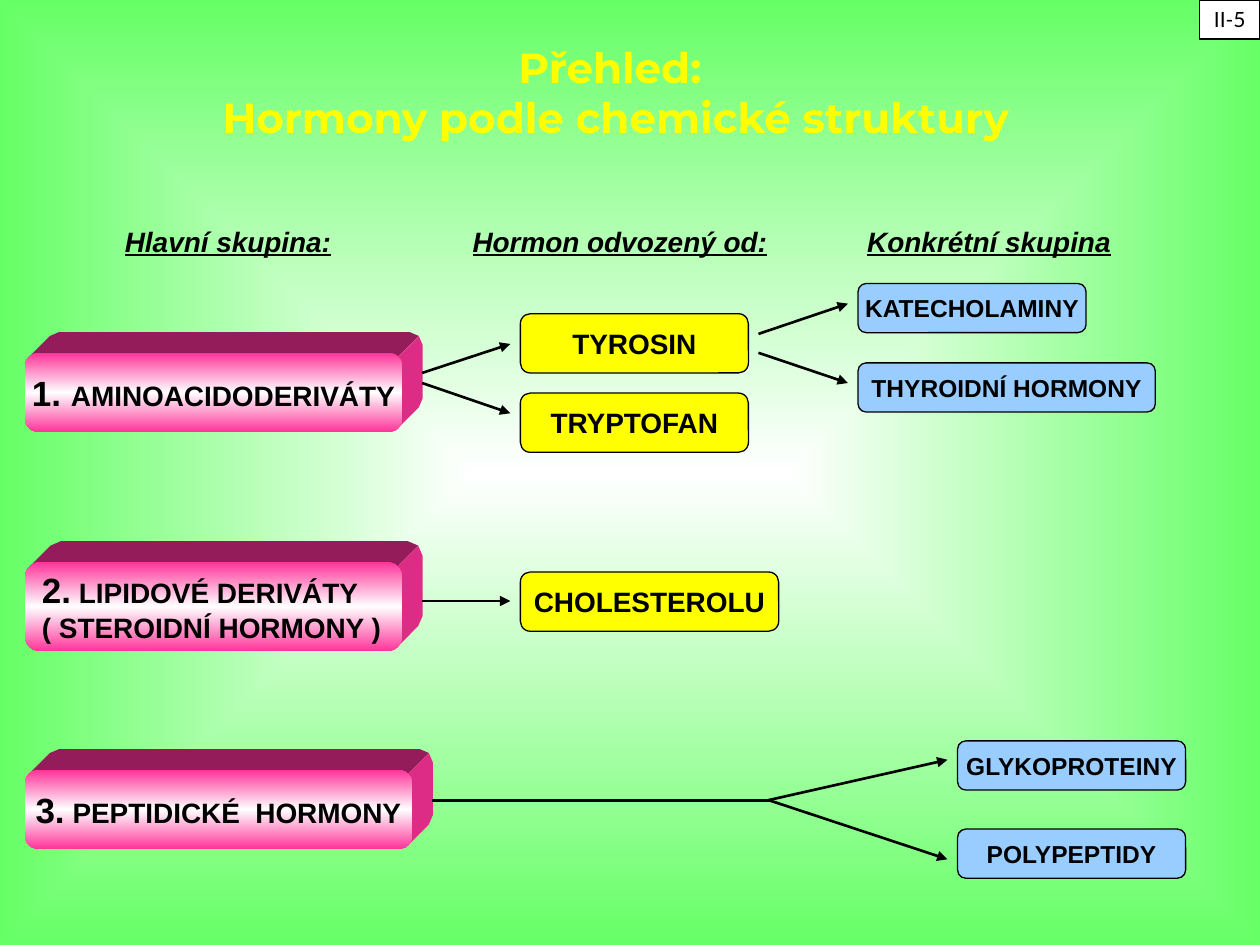
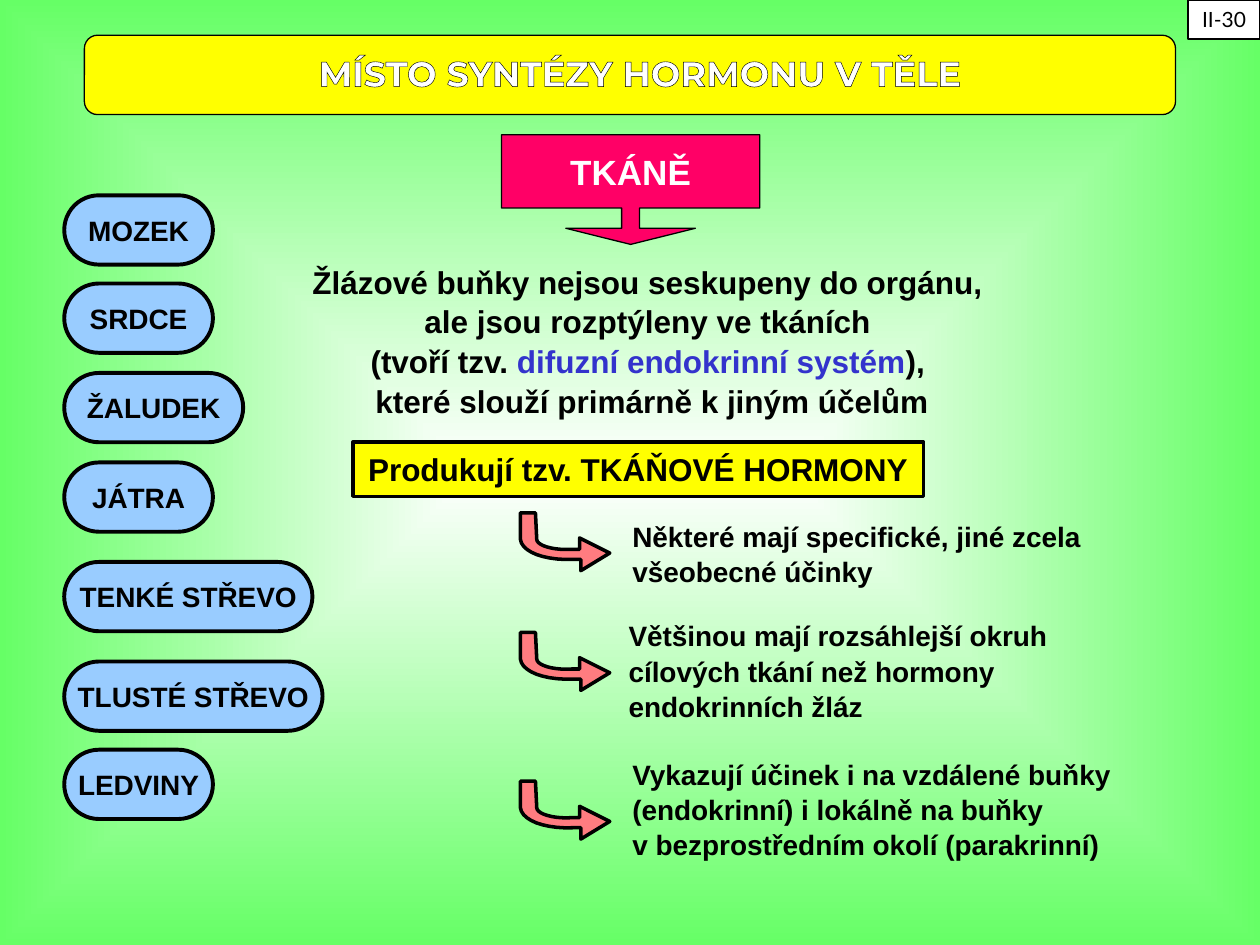
from pptx import Presentation
from pptx import util as u
from pptx.dml import color
from pptx.enum import shapes, text
from pptx.oxml import parse_xml
from pptx.oxml import ns

RGB = color.RGBColor
BLACK, WHITE = RGB(0, 0, 0), RGB(255, 255, 255)
YELLOW, GREEN = RGB(255, 255, 0), RGB(0x66, 0xFF, 0x66)
BLUE, INDIGO = RGB(0x99, 0xCC, 0xFF), RGB(0x33, 0x33, 0xCC)
PINK, ROSE, CORAL = RGB(0xFF, 0x33, 0x99), RGB(0xFF, 0, 0x66), RGB(0xFF, 0x7C, 0x80)
PLUM, MAGENTA = RGB(0x94, 0x1C, 0x5A), RGB(0xDD, 0x2C, 0x85)

KIND = shapes.MSO_SHAPE
MID, LEFT = text.PP_ALIGN.CENTER, text.PP_ALIGN.LEFT
COLS, ROWS = 100, 75
DEPTH = 1.65  # offset of the back of a block, in grid units
BODY, HEAD, PAGE = "Arial", "Montserrat", "Lato"


def grade(host, stops, way):
    """Replace the first solid fill in host by a gradient."""
    gs = "".join(f'<a:gs pos="{pos * 1000}"><a:srgbClr val="{rgb}"/></a:gs>'
                 for pos, rgb in stops)
    old = host.find(".//" + ns.qn("a:solidFill"))
    new = parse_xml(f'<a:gradFill rotWithShape="1" {ns.nsdecls("a")}>'
                    f'<a:gsLst>{gs}</a:gsLst>{way}</a:gradFill>')
    old.getparent().replace(old, new)


def curve(a, b, c, d, steps=10):
    """Points along a cubic curve, without its start."""
    for t in (n / steps for n in range(1, steps + 1)):
        s = 1 - t
        yield tuple(s**3 * p + 3 * s * s * t * q + 3 * s * t * t * r + t**3 * e
                    for p, q, r, e in zip(a, b, c, d))


class Deck:
    def __init__(self):
        self.prs = Presentation()
        self.prs.slide_width, self.prs.slide_height = u.Inches(10), u.Inches(7.5)
        self.slide = None
        master = self.prs.slide_master
        fill = master.background.fill
        fill.solid()
        fill.fore_color.rgb = WHITE
        grade(master.element, [(0, WHITE), (100, GREEN)],
              '<a:path path="shape"><a:fillToRect l="50000" t="50000" '
              'r="50000" b="50000"/></a:path>')

    def x(self, col):
        return round(self.prs.slide_width * col / COLS)

    def y(self, row):
        return round(self.prs.slide_height * row / ROWS)

    def area(self, at):
        return self.x(at[0]), self.y(at[1]), self.x(at[2]), self.y(at[3])

    def start(self):
        self.slide = self.prs.slides.add_slide(self.prs.slide_layouts[5])

    def letter(self, shape, lines, size, rgb=BLACK, face=BODY, bold=True,
               align=MID, slant=False, lead=None, anchor=text.MSO_ANCHOR.TOP):
        """Fill a shape with lines; a line is a string or (text, size, colour) runs."""
        frame = shape.text_frame
        frame.auto_size = text.MSO_AUTO_SIZE.NONE
        frame.word_wrap = False
        frame.vertical_anchor = anchor
        for n, line in enumerate(lines):
            par = frame.add_paragraph() if n else frame.paragraphs[0]
            par.alignment, par.line_spacing = align, lead
            par.space_before = u.Pt(0)
            font = par.font
            font.name, font.size, font.bold = face, u.Pt(size), bold
            font.color.rgb = rgb
            if slant:
                font.italic = font.underline = True
            for words, big, tint in [(line, None, None)] if isinstance(line, str) else line:
                run = par.add_run()
                run.text = words
                if big:
                    run.font.size = u.Pt(big)
                if tint:
                    run.font.color.rgb = tint

    def title(self, at, lines, size, rgb):
        head = self.slide.shapes.title
        head.left, head.top, head.width, head.height = self.area(at)
        self.letter(head, lines, size, rgb, HEAD)
        for par in head.text_frame.paragraphs:
            for run in par.runs:  # thin black outline of the letters
                run.font._element.insert(0, parse_xml(
                    f'<a:ln w="9525" {ns.nsdecls("a")}><a:solidFill>'
                    f'<a:srgbClr val="{BLACK}"/></a:solidFill></a:ln>'))
        head.element.getparent().append(head.element)  # in front of the band

    def note(self, at, lines, size, **style):
        self.letter(self.slide.shapes.add_textbox(*self.area(at)), lines, size, **style)

    def paint(self, shape, fill, edge):
        shape.shadow.inherit = False
        shape.fill.solid()
        shape.fill.fore_color.rgb = fill
        if edge:
            shape.line.color.rgb, shape.line.width = BLACK, u.Pt(edge)
        else:
            shape.line.fill.background()

    def box(self, at, lines, fill, size=16, kind=KIND.ROUNDED_RECTANGLE,
            edge=0.75, adj=(), **style):
        shape = self.slide.shapes.add_shape(kind, *self.area(at))
        for n, val in enumerate(adj):
            shape.adjustments[n] = val
        self.paint(shape, fill, edge)
        self.letter(shape, lines, size, anchor=text.MSO_ANCHOR.MIDDLE, **style)
        return shape

    def outline(self, pts, fill, edge=0):
        pts = [(self.x(col), self.y(row)) for col, row in pts]
        build = self.slide.shapes.build_freeform(*pts[0])
        build.add_line_segments(pts[1:])
        self.paint(build.convert_to_shape(), fill, edge)

    def block(self, at, lines, align=MID):
        """Rounded pink block with a visible top and right side."""
        left, top, wide, high = at
        right, foot, rad = left + wide, top + high, high / 6
        cut = 0.3 * rad
        nw, ne, se = (left + cut, top + cut), (right - cut, top + cut), (right - cut, foot - cut)
        roof = [nw, (left + rad, top), (right - rad, top), ne]
        side = [ne, (right, top + rad), (right, foot - rad), se]
        for face, tint in ((roof, PLUM), (side, MAGENTA)):
            far = [(col + DEPTH, row - DEPTH) for col, row in face]
            self.outline([face[0], *far, face[-1]], tint)
        front = self.box(at, lines, PINK, kind=KIND.FLOWCHART_ALTERNATE_PROCESS,
                         edge=0, align=align)
        grade(front.element, [(0, PINK), (50, WHITE), (100, PINK)],
              '<a:lin ang="5400000" scaled="1"/>')

    def line(self, start, end, width=1.5, arrow=True):
        link = self.slide.shapes.add_connector(
            shapes.MSO_CONNECTOR.STRAIGHT, self.x(start[0]), self.y(start[1]),
            self.x(end[0]), self.y(end[1]))
        link.line.color.rgb, link.line.width = BLACK, u.Pt(width)
        if arrow:
            link.line._get_or_add_ln().append(
                parse_xml(f'<a:tailEnd type="triangle" {ns.nsdecls("a")}/>'))
        link.element.spPr.append(parse_xml(f'<a:effectLst {ns.nsdecls("a")}/>'))

    def page(self, label, wide):
        self.box((COLS - wide, 0, wide, 3.1), [label], WHITE, 12,
                 KIND.RECTANGLE, face=PAGE, bold=False)


def groups(deck):
    deck.start()
    deck.title((3.5, 2.8, 89.8, 10.2),
               ["Přehled:", " Hormony podle chemické struktury"], 24, YELLOW)

    # Column heads
    for left, wide, head in ((8.9, 18.4, "Hlavní skupina:"),
                             (36.5, 25.4, "Hormon odvozený od:"),
                             (67.8, 21.4, "Konkrétní skupina")):
        deck.note((left, 17.3, wide, 3.7), [head], 16, slant=True)

    # Main groups
    deck.block((2, 28, 29.9, 6.3), [[("1. ", 20, None), ("AMINOACIDODERIVÁTY", None, None)]])
    deck.block((2, 44.6, 29.9, 7.1),
               [[("2.", 20, None), (" LIPIDOVÉ DERIVÁTY", None, None)],
                "( STEROIDNÍ HORMONY )"], LEFT)
    deck.block((2, 61.1, 30.7, 6.3), [[("3.", 20, None), (" PEPTIDICKÉ  HORMONY", None, None)]])

    # Sources and single groups
    for top, wide, name in ((24.9, 18.1, "TYROSIN"), (31.2, 18.1, "TRYPTOFAN"),
                            (45.4, 20.5, "CHOLESTEROLU")):
        deck.box((41.3, top, wide, 4.7), [name], YELLOW)
    for left, top, wide, name in ((68.1, 22.5, 18.1, "KATECHOLAMINY"),
                                  (68.1, 28.8, 23.6, "THYROIDNÍ HORMONY"),
                                  (76, 58.8, 18.1, "GLYKOPROTEINY"),
                                  (76, 65.8, 18.1, "POLYPEPTIDY")):
        deck.box((left, top, wide, 3.9), [name], BLUE, 14)

    # Links
    fork = (61, 63.5)
    deck.line(fork, (34.3, 63.5), 1.75, arrow=False)
    for start, end in (((60.2, 26.5), (67.3, 24.1)), ((60.2, 28), (67.3, 30.4)),
                       ((33.5, 29.6), (40.5, 27.3)), ((33.5, 30.4), (40.5, 32.8)),
                       ((33.5, 47.7), (40.5, 47.7)),
                       (fork, (75.2, 60.3)), (fork, (75.2, 68.2))):
        deck.line(start, end)
    deck.page("II-5", 4.8)


def tissues(deck):
    deck.start()
    deck.box((39.8, 10.7, 20.5, 8.7), ["TKÁNĚ"], ROSE, 20, KIND.DOWN_ARROW_CALLOUT,
             adj=(0.164, 0.591, 0.147, 0.667), rgb=WHITE)
    deck.box((6.7, 2.8, 86.6, 6.3), [], YELLOW)
    deck.title((13.8, 3.6, 74, 4), ["MÍSTO SYNTÉZY HORMONU V TĚLE"], 20, WHITE)

    # Organs
    for top, wide, organ in ((15.5, 11.8, "MOZEK"), (22.5, 11.8, "SRDCE"),
                             (29.6, 14.2, "ŽALUDEK"), (36.7, 11.8, "JÁTRA"),
                             (44.6, 19.7, "TENKÉ STŘEVO"), (52.5, 20.5, "TLUSTÉ STŘEVO"),
                             (59.5, 11.8, "LEDVINY")):
        deck.box((5.1, top, wide, 5.5), [organ], BLUE, edge=2.25, adj=(0.5,))

    # Explanation
    deck.note((23.8, 20.2, 55.9, 13),
              ["Žlázové buňky nejsou seskupeny do orgánu, ",
               "ale jsou rozptýleny ve tkáních ",
               [("(tvoří tzv. ", None, None),
                ("difuzní endokrinní systém", None, INDIGO), ("), ", None, None)],
               "které slouží primárně k jiným účelům"], 18, lead=1.05)
    deck.box((28, 35.1, 45.3, 4.3), ["Produkují tzv. TKÁŇOVÉ HORMONY"], YELLOW, 18,
             KIND.RECTANGLE, edge=2)

    # Effects, each with a bent arrow
    bend = [(7.1, 3.3), (4.8, 4.7), (4.8, 3.8), (4.2, 3.8),
            *curve((4.2, 3.8), (1.9, 3.9), (0.1, 3.2), (0, 2.2)),
            (0, 0.1), (1.2, 0.1), (1.3, 2.2),
            *curve((1.3, 2.2), (1.3, 2.7), (2.6, 3.1), (4.1, 3)),
            (4.7, 3), (4.7, 2.1)]
    for top, left, start, wide, lines in (
            (40.6, 49.2, 40.6, 38.4, ["Některé mají specifické, jiné zcela",
                                      "všeobecné účinky"]),
            (50.1, 48.9, 48.5, 35.4, ["Většinou mají rozsáhlejší okruh",
                                      "cílových tkání než hormony", "endokrinních žláz"]),
            (61.9, 49.2, 59.5, 40.8, ["Vykazují účinek i na vzdálené buňky",
                                      "(endokrinní) i lokálně na buňky",
                                      "v bezprostředním okolí (parakrinní)"])):
        deck.outline([(41.3 + col, top + row) for col, row in bend], CORAL, 2)
        deck.note((left, start, wide, 1 + 2.67 * len(lines)), lines, 16,
                  align=LEFT, lead=1.05)
    deck.page("II-30", 5.7)


def main():
    deck = Deck()
    groups(deck)
    tissues(deck)
    deck.prs.save("out.pptx")


if __name__ == "__main__":
    main()
